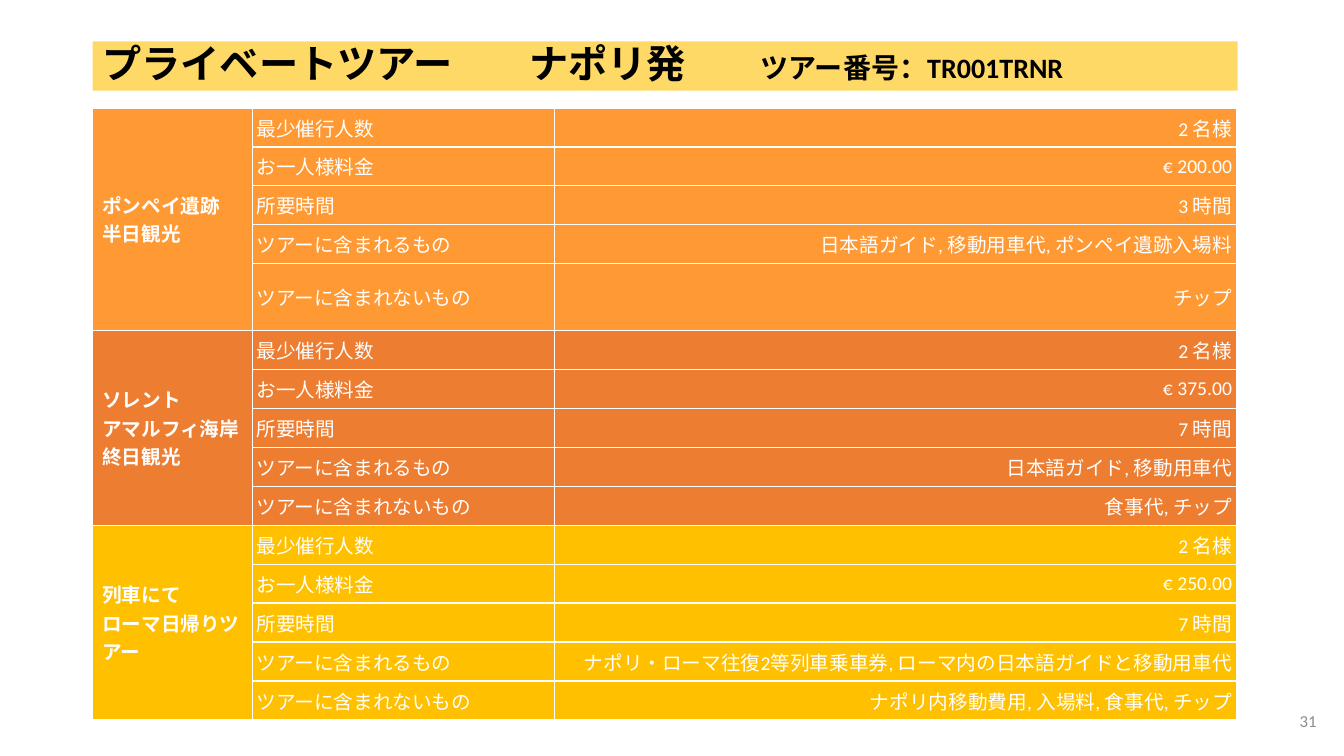
import pptx
import pptx.util
import pptx.dml.color
import pptx.enum.text
import pptx.oxml
import pptx.oxml.ns

Pt = pptx.util.Pt
RGBColor = pptx.dml.color.RGBColor
ALIGN = pptx.enum.text.PP_ALIGN
MIDDLE = pptx.enum.text.MSO_ANCHOR.MIDDLE

BLACK = RGBColor(0x00, 0x00, 0x00)
WHITE = RGBColor(0xFF, 0xFF, 0xFF)
GREY = RGBColor(0x8C, 0x8C, 0x8C)
PALE_GOLD = RGBColor(0xFF, 0xD9, 0x66)
LIGHT_ORANGE = RGBColor(0xFF, 0x99, 0x33)
ORANGE = RGBColor(0xED, 0x7D, 0x31)
GOLD = RGBColor(0xFF, 0xC0, 0x00)

LABELS = ["最少催行人数", "お一人様料金", "所要時間", "ツアーに含まれるもの", "ツアーに含まれないもの"]
TOURS = [
    (LIGHT_ORANGE, ["ポンペイ遺跡", "半日観光"],
     ["2 名様", "€ 200.00", "3 時間", "日本語ガイド, 移動用車代, ポンペイ遺跡入場料", "チップ"]),
    (ORANGE, ["ソレント", "アマルフィ海岸", "終日観光"],
     ["2 名様", "€ 375.00", "7 時間", "日本語ガイド, 移動用車代", "食事代, チップ"]),
    (GOLD, ["列車にて", "ローマ日帰りツアー"],
     ["2 名様", "€ 250.00", "7 時間",
      "ナポリ・ローマ往復2等列車乗車券, ローマ内の日本語ガイドと移動用車代",
      "ナポリ内移動費用, 入場料, 食事代, チップ"]),
]
COLUMN_WIDTHS = [114.5, 216, 486.7]
ROW_HEIGHT = 27.85
TALL_ROW_HEIGHT = 47.5
TALL_ROW = 4
CELL_MARGIN = 2.9


def add_span(para, text, color, **values):
    span = para.add_run()
    span.text = text
    span.font.name = "Calibri"
    span.font.color.rgb = color
    for name, value in values.items():
        setattr(span.font, name, value)


def fill_cell(cell, lines, fill, align, bold):
    properties = cell._tc.get_or_add_tcPr()
    for side in ("lnL", "lnR", "lnT", "lnB"):
        properties.append(pptx.oxml.parse_xml(
            f'<a:{side} {pptx.oxml.ns.nsdecls("a")} w="{Pt(1)}">'
            f'<a:solidFill><a:srgbClr val="{WHITE}"/></a:solidFill></a:{side}>'))
    cell.fill.solid()
    cell.fill.fore_color.rgb = fill
    cell.vertical_anchor = MIDDLE
    for index, line in enumerate(lines):
        para = cell.text_frame.paragraphs[0] if index == 0 else cell.text_frame.add_paragraph()
        para.alignment = align
        add_span(para, line, WHITE, size=Pt(14), bold=bold)


deck = pptx.Presentation()
deck.slide_width = Pt(960)
deck.slide_height = Pt(540)
page = deck.slides.add_slide(deck.slide_layouts[6])

title_box = page.shapes.add_textbox(Pt(66.2), Pt(29.5), Pt(817.9), Pt(35.3))
title_box.fill.solid()
title_box.fill.fore_color.rgb = PALE_GOLD
title_box.text_frame.word_wrap = True
title_box.text_frame.vertical_anchor = MIDDLE
title = title_box.text_frame.paragraphs[0]
title.line_spacing = 0.9
title._p.get_or_add_pPr().append(pptx.oxml.parse_xml(
    f'<a:tabLst {pptx.oxml.ns.nsdecls("a")}>'
    f'<a:tab pos="{Pt(305)}" algn="l"/><a:tab pos="{Pt(470)}" algn="l"/></a:tabLst>'))
add_span(title, "プライベートツアー\tナポリ発\t", BLACK, size=Pt(28), bold=True)
add_span(title, "ツアー番号：TR001TRNR", BLACK, size=Pt(20), bold=True)

row_count = len(TOURS) * len(LABELS)
table_height = ROW_HEIGHT * (row_count - 1) + TALL_ROW_HEIGHT
table = page.shapes.add_table(row_count, len(COLUMN_WIDTHS), Pt(65.8), Pt(77.1),
                              Pt(sum(COLUMN_WIDTHS)), Pt(table_height)).table
table.first_row = False
table.horz_banding = False
for column, width in zip(table.columns, COLUMN_WIDTHS):
    column.width = Pt(width)
for index, row in enumerate(table.rows):
    row.height = Pt(TALL_ROW_HEIGHT if index == TALL_ROW else ROW_HEIGHT)

for tour_index, (color, name_lines, details) in enumerate(TOURS):
    first_row = tour_index * len(LABELS)
    for offset, (label, detail) in enumerate(zip(LABELS, details)):
        row = first_row + offset
        fill_cell(table.cell(row, 0), name_lines if offset == 0 else [], color, ALIGN.LEFT, True)
        for column, text, align in ((1, label, ALIGN.LEFT), (2, detail, ALIGN.RIGHT)):
            cell = table.cell(row, column)
            fill_cell(cell, [text], color, align, False)
            for side in ("left", "right", "top", "bottom"):
                setattr(cell, f"margin_{side}", Pt(CELL_MARGIN))
    table.cell(first_row, 0).merge(table.cell(first_row + len(LABELS) - 1, 0))

number_box = page.shapes.add_textbox(Pt(731.5), Pt(500.5), Pt(216), Pt(28.8))
number_box.text_frame.word_wrap = True
number_box.text_frame.vertical_anchor = MIDDLE
number = number_box.text_frame.paragraphs[0]
number.alignment = ALIGN.RIGHT
add_span(number, "31", GREY, size=Pt(12))

deck.save("out.pptx")
